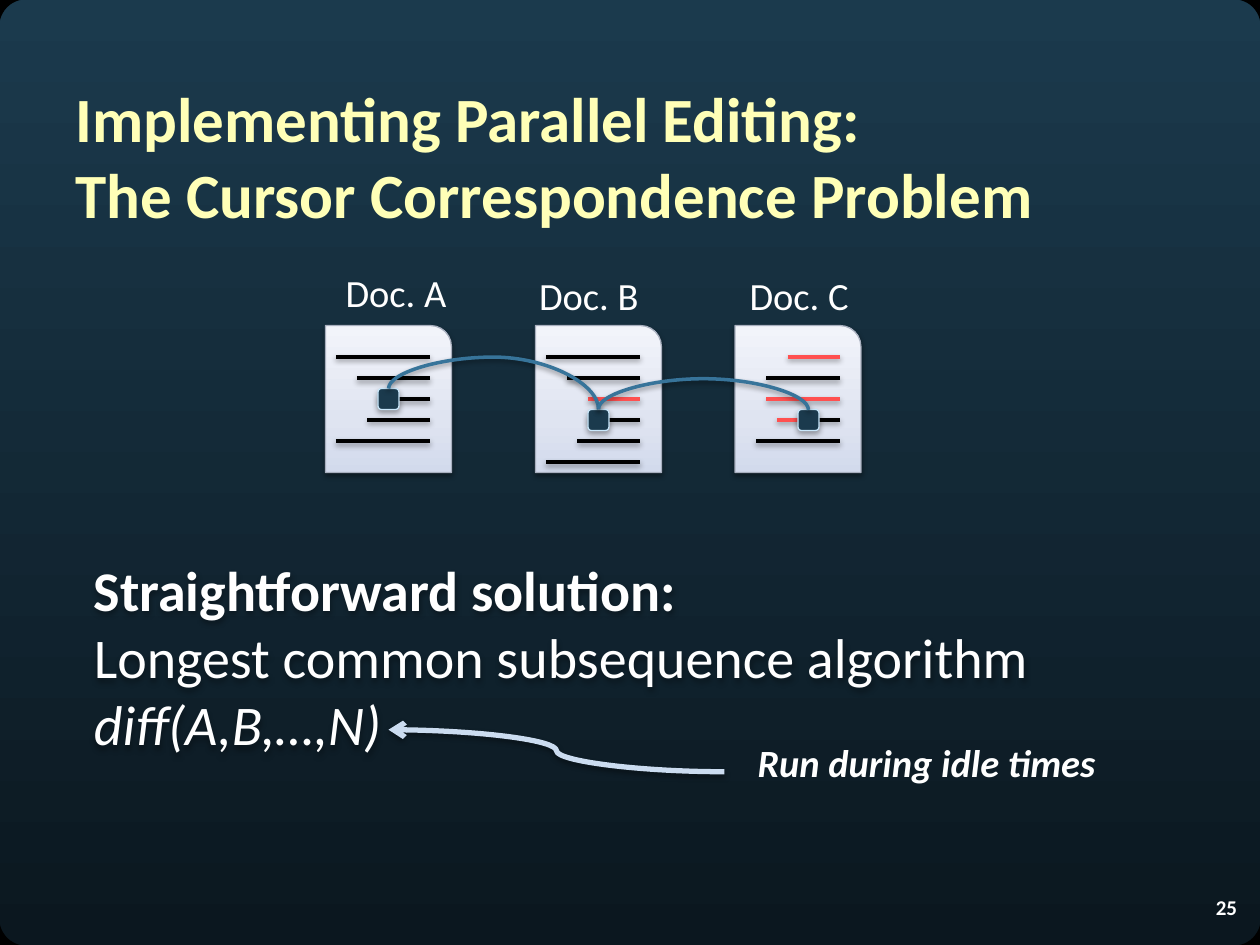
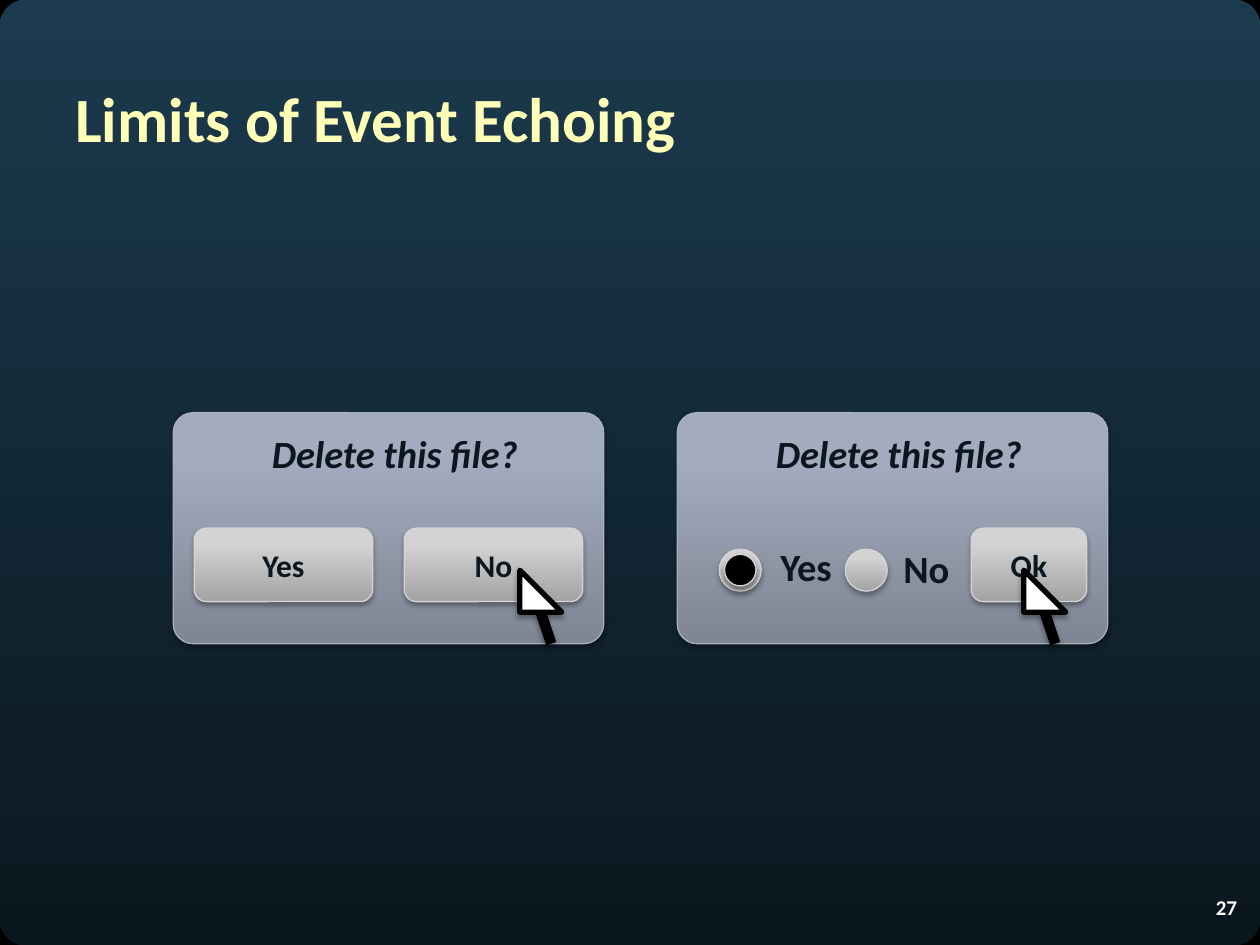
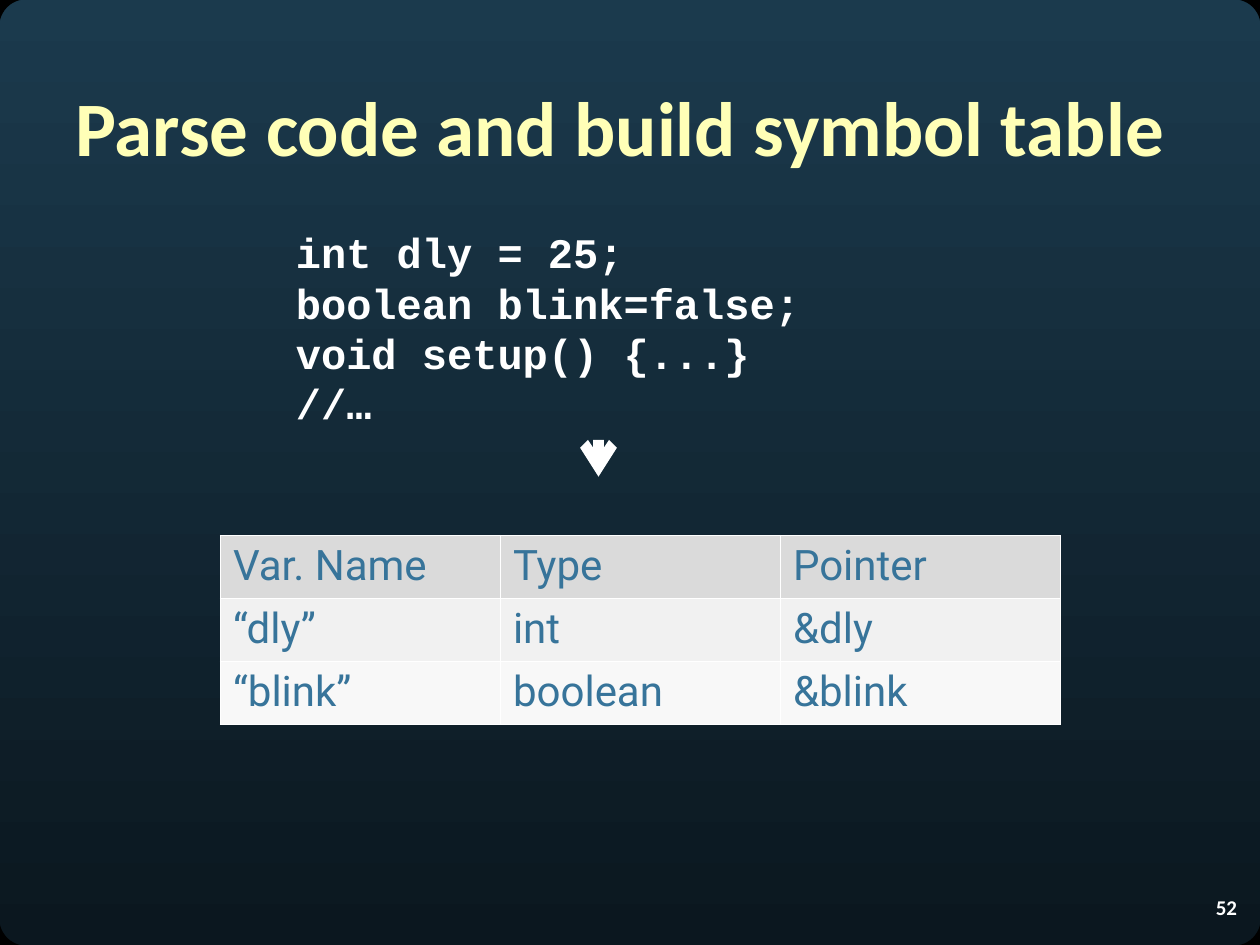
import math

import pptx
import pptx.util
import pptx.dml.color
import pptx.enum.shapes
import pptx.enum.text
import pptx.oxml
import pptx.oxml.ns
from lxml import etree

PX = 7620  # EMU per px, 120 px to the inch
SHAPE = pptx.enum.shapes.MSO_SHAPE
CONN = pptx.enum.shapes.MSO_CONNECTOR
ALIGN = pptx.enum.text.PP_ALIGN
MIDDLE = pptx.enum.text.MSO_ANCHOR.MIDDLE
qn = pptx.oxml.ns.qn

# Shared look
W, H = 1200, 900
FONT, CODE_FONT, TABLE_FONT = "Calibri", "Courier New", "Roboto"
WHITE, BLACK, RED = "FFFFFF", "000000", "FF5050"
NIGHT, NAVY, TEAL, CREAM, ICE = "0B171F", "1B3A4D", "37749A", "FFFFB7", "CBDCF0"
EDGE, BUTTON_EDGE, MARK_EDGE = "A8AFBE", "D5D5D5", "C9E7FB"
BACKDROP = [(0, NIGHT), (100, NAVY)]
PAPER = [(0, "D2DAEC"), (35, "DFE4F1"), (100, "F2F4FA")]
DIALOG = [(0, "7E8593"), (80, "A3ACBF"), (100, "A4ADC1")]
BUTTON = [(0, "A3A3A3"), (80, "D3D3D3"), (100, "D4D4D4")]
LINE_SHADOW, SHAPE_SHADOW = (20000, 38), (23000, 35)  # distance in EMU, opacity in %

# Slide 1: documents; each text line is (row, start, end, colour), cursor is its row
DOC_TOP, DOC_W, DOC_H, ROW_GAP = 310, 120, 140, 20
DOCS = [
    {"left": 310, "label": "Doc. A", "label_box": (310, 250, 127, 56), "cursor": (50, 2),
     "lines": [(0, 10, 100, BLACK), (1, 30, 100, BLACK), (2, 50, 100, BLACK),
               (3, 40, 100, BLACK), (4, 10, 100, BLACK)]},
    {"left": 510, "label": "Doc. B", "label_box": (493, 253, 127, 56), "cursor": (50, 3),
     "lines": [(0, 10, 100, BLACK), (1, 30, 100, BLACK), (2, 50, 100, RED),
               (3, 50, 100, BLACK), (4, 40, 100, BLACK), (5, 10, 100, BLACK)]},
    {"left": 700, "label": "Doc. C", "label_box": (689, 253, 131, 56), "cursor": (60, 3),
     "lines": [(0, 50, 100, RED), (1, 30, 100, BLACK), (2, 30, 100, RED),
               (3, 40, 70, RED), (3, 60, 100, BLACK), (4, 20, 100, BLACK)]},
]
ARCS = [(0, 1), (2, 1)]  # from cursor, to cursor
SOLUTION = "Straightforward solution:\vLongest common subsequence algorithm\vdiff(A,B,…,N)"

# Slide 2: dialogs with (text, left, width) buttons
DIALOGS = [
    {"left": 165, "buttons": [("Yes", 185, 170), ("No", 385, 170)]},
    {"left": 645, "buttons": [("Ok", 925, 110)]},
]
RADIOS = [("Yes", 685, (724, 511, 80, 56)), ("No", 805, (846, 513, 70, 56))]

# Slide 3: code and symbol table
CODE = ["int dly = 25;", "boolean blink=false;", "void setup() {...}", "//…"]
SYMBOLS = [("DADADA", ["Var. Name", "Type", "Pointer"]),
           ("F1F1F1", ["“dly”", "int", "&dly"]),
           ("F8F8F8", ["“blink”", "boolean", "&blink"])]


def px(*values):
    return [pptx.util.Emu(int(v * PX)) for v in values]


def rgb(code):
    return pptx.dml.color.RGBColor.from_string(code)


def sub(parent, tag, **attrs):
    return etree.SubElement(parent, qn(tag), {k: str(v) for k, v in attrs.items()})


def paint(fill, element, colour):
    """Fill with a colour, or with gradient stops that run from bottom to top."""
    if isinstance(colour, str):
        fill.solid()
        fill.fore_color.rgb = rgb(colour)
        return
    fill.gradient()
    fill.gradient_angle = 90
    stops = element.find(".//" + qn("a:gsLst"))
    for old in list(stops):
        stops.remove(old)
    for position, code in colour:
        sub(sub(stops, "a:gs", pos=position * 1000), "a:srgbClr", val=code)


def cast_shadow(shape, shadow):
    sp_pr = shape._element.spPr
    effects = sp_pr.find(qn("a:effectLst"))
    if effects is None:
        effects = sub(sp_pr, "a:effectLst")
    if shadow:
        distance, opacity = shadow
        outer = sub(effects, "a:outerShdw", blurRad=40000, dist=distance, dir=5400000, rotWithShape=0)
        sub(sub(outer, "a:srgbClr", val=BLACK), "a:alpha", val=opacity * 1000)


def style(tf, size, colour, bold=False, italic=False, align=ALIGN.LEFT, font=FONT):
    for p in tf.paragraphs:
        p.alignment = align
        for r in p.runs:
            f = r.font
            f.name, f.size, f.bold, f.italic = font, pptx.util.Pt(size), bold, italic
            f.color.rgb = rgb(colour)


def add_text(s, box, text, size, colour=WHITE, wrap=True, anchor=None, **look):
    tf = s.shapes.add_textbox(*px(*box)).text_frame
    tf.word_wrap = wrap
    if anchor is not None:
        tf.vertical_anchor = anchor
    tf.text = text
    style(tf, size, colour, **look)


def add_label(s, box, text, colour=WHITE, **look):
    add_text(s, box, text, 22, colour, wrap=False, align=ALIGN.RIGHT, **look)


def dress(sp, fill, line, width, shadow):
    if fill:
        paint(sp.fill, sp._element, fill)
    else:
        sp.fill.background()
    if line:
        sp.line.color.rgb = rgb(line)
        sp.line.width = pptx.util.Pt(width)
    else:
        sp.line.fill.background()
    sp.shadow.inherit = False
    cast_shadow(sp, shadow)


def add_shape(s, kind, box, fill=None, line=None, width=0.75, shadow=SHAPE_SHADOW, adj=None):
    sp = s.shapes.add_shape(kind, *px(*box))
    if adj is not None:
        sp.adjustments[0] = adj
    dress(sp, fill, line, width, shadow)
    return sp


def add_corner(s, left, top, turn, radius=34, steps=12):
    """Draw a thick quarter circle, turned clockwise by quarter turns."""
    angles = [math.pi / 2 * i / steps for i in range(steps + 1)]
    points = [px(left + radius * math.sin(a), top + radius * (1 - math.cos(a))) for a in angles]
    builder = s.shapes.build_freeform(*points[0])
    builder.add_line_segments(points[1:], close=False)
    sp = builder.convert_to_shape()
    sp.rotation = 90 * turn
    dress(sp, None, BLACK, 10, None)


def add_line(s, start, end, colour, width=2, kind=CONN.STRAIGHT, arrow=False, shadow=LINE_SHADOW):
    cx = s.shapes.add_connector(kind, *px(*start, *end))
    cx.line.color.rgb = rgb(colour)
    cx.line.width = pptx.util.Pt(width)
    if arrow:
        sub(cx._element.spPr.find(qn("a:ln")), "a:tailEnd", type="arrow")
    cast_shadow(cx, shadow)
    return cx


def add_arc(s, first, last, rise=30):
    """Join the tops of two cursors by a curve that rises above the first."""
    ends = [(m.left // PX + 10, m.top // PX) for m in (first, last)]
    (x1, y1), (x2, y2) = ends
    cx = add_line(s, *ends, TEAL, kind=CONN.CURVE)
    cx.begin_connect(first, 0)
    cx.end_connect(last, 0)
    # The connector box is turned by 270 degrees about its centre
    drop, span = max(y2 - y1, 1), abs(x2 - x1)
    cx.left, cx.top, cx.width, cx.height = px(
        (x1 + x2 - drop) / 2, (y1 + y2 - span) / 2, drop, span)
    xfrm = cx._element.spPr.find(qn("a:xfrm"))
    for flip, on in (("flipH", y2 > y1), ("flipV", x2 < x1)):
        xfrm.set(flip, "1" if on else "0")
    xfrm.set("rot", str(270 * 60000))
    bend = rise / drop * (-1 if y2 > y1 else 1)
    geometry = cx._element.spPr.find(qn("a:prstGeom"))
    guides = geometry.find(qn("a:avLst"))
    if guides is None:
        guides = sub(geometry, "a:avLst")
    sub(guides, "a:gd", name="adj1", fmla=f"val {int(bend * 100000)}")


def new_slide(prs, title, number, size=36):
    s = prs.slides.add_slide(prs.slide_layouts[6])
    # Rounded slide corners
    near, far_x, far_y = -9, W - 25, H - 25
    corners = [(far_x, near), (far_x, far_y), (near, far_y), (near, near)]
    for turn, (x, y) in enumerate(corners):
        add_corner(s, x, y, turn)
    add_text(s, (60, 70, 1100, 134), title, size, CREAM, bold=True)
    add_text(s, (1100, 840, 90, 48), str(number), 12, bold=True, align=ALIGN.RIGHT, anchor=MIDDLE)
    return s


def cursor_slide(prs):
    s = new_slide(prs, "Implementing Parallel Editing:\vThe Cursor Correspondence Problem", 25)
    # Solution text
    sp = add_shape(s, SHAPE.ROUNDED_RECTANGLE, (70, 505, 1030, 240), adj=0.107)
    tf = sp.text_frame
    tf.vertical_anchor = MIDDLE
    tf.text = SOLUTION
    style(tf, 32, WHITE)
    heading, _, call = tf.paragraphs[0].runs
    heading.font.bold = True
    call.font.italic = True
    add_label(s, (700, 698, 355, 56), "Run during idle times", bold=True, italic=True)
    add_line(s, (690, 735), (370, 695), ICE, 3, CONN.CURVE, arrow=True)
    # Documents, then cursors on top
    marks = []
    for doc in DOCS:
        left = doc["left"]
        add_shape(s, SHAPE.ROUND_1_RECTANGLE, (left, DOC_TOP, DOC_W, DOC_H), PAPER, EDGE,
                  shadow=LINE_SHADOW)
        for row, start, end, colour in doc["lines"]:
            y = DOC_TOP + 30 + row * ROW_GAP
            add_line(s, (left + start, y), (left + end, y), colour)
        add_label(s, doc["label_box"], doc["label"])
        x, row = doc["cursor"]
        marks.append(add_shape(s, SHAPE.ROUNDED_RECTANGLE,
                               (left + x, DOC_TOP + 20 + row * ROW_GAP, 20, 20), NAVY, MARK_EDGE))
    for first, last in ARCS:
        add_arc(s, marks[first], marks[last])


def dialog_slide(prs):
    s = new_slide(prs, "Limits of Event Echoing", 27)
    for dialog in DIALOGS:
        left = dialog["left"]
        add_shape(s, SHAPE.ROUNDED_RECTANGLE, (left, 393, 410, 220), DIALOG, EDGE, adj=0.086)
        for text, x, width in dialog["buttons"]:
            sp = add_shape(s, SHAPE.ROUNDED_RECTANGLE, (x, 503, width, 70), BUTTON, BUTTON_EDGE)
            sp.text_frame.vertical_anchor = MIDDLE
            sp.text_frame.text = text
            style(sp.text_frame, 18, NIGHT, bold=True, align=ALIGN.CENTER)
        # Mouse pointer
        add_shape(s, SHAPE.RIGHT_TRIANGLE, (left + 330, 543, 40, 40), WHITE, BLACK, 3)
        add_line(s, (left + 350, 583), (left + 360, 613), BLACK, 6)
        add_label(s, (left + 70, 404, 270, 56), "Delete this file?", NIGHT, bold=True, italic=True)
    # Radio buttons, the first one chosen
    for text, x, box in RADIOS:
        add_shape(s, SHAPE.OVAL, (x, 523, 40, 40), BUTTON, BUTTON_EDGE)
        add_label(s, box, text, NIGHT, bold=True)
    add_shape(s, SHAPE.OVAL, (RADIOS[0][1] + 5, 528, 30, 30), BLACK, BUTTON_EDGE)


def symbol_slide(prs):
    s = new_slide(prs, "Parse code and build symbol table", 52, size=44)
    # Symbol table; rows grow to fit their text
    table_w, table_h, row_h = 800, 180, 50
    rows, cols = len(SYMBOLS), len(SYMBOLS[0][1])
    table = s.shapes.add_table(rows, cols, *px(210, 510, table_w, table_h)).table
    for column in table.columns:
        column.width = px(table_w / cols)[0]
    for i, (fill, values) in enumerate(SYMBOLS):
        table.rows[i].height = px(row_h)[0]
        for j, value in enumerate(values):
            cell = table.cell(i, j)
            cell.text = value
            style(cell.text_frame, 24, TEAL, font=TABLE_FONT)
            props = cell._tc.get_or_add_tcPr()
            for side in "LRTB":
                border = sub(props, "a:ln" + side, w=12700)
                sub(sub(border, "a:solidFill"), "a:srgbClr", val=WHITE)
            paint(cell.fill, props, fill)
    # Code and arrow
    add_text(s, (270, 210, 600, 206), "\n".join(CODE), 24, bold=True, font=CODE_FONT)
    add_line(s, (570, 430), (570, 454), WHITE, 6, arrow=True, shadow=None)


def main():
    prs = pptx.Presentation()
    prs.slide_width, prs.slide_height = px(W, H)
    master = prs.slide_master
    paint(master.background.fill, master._element, BACKDROP)
    cursor_slide(prs)
    dialog_slide(prs)
    symbol_slide(prs)
    prs.save("out.pptx")


if __name__ == "__main__":
    main()
